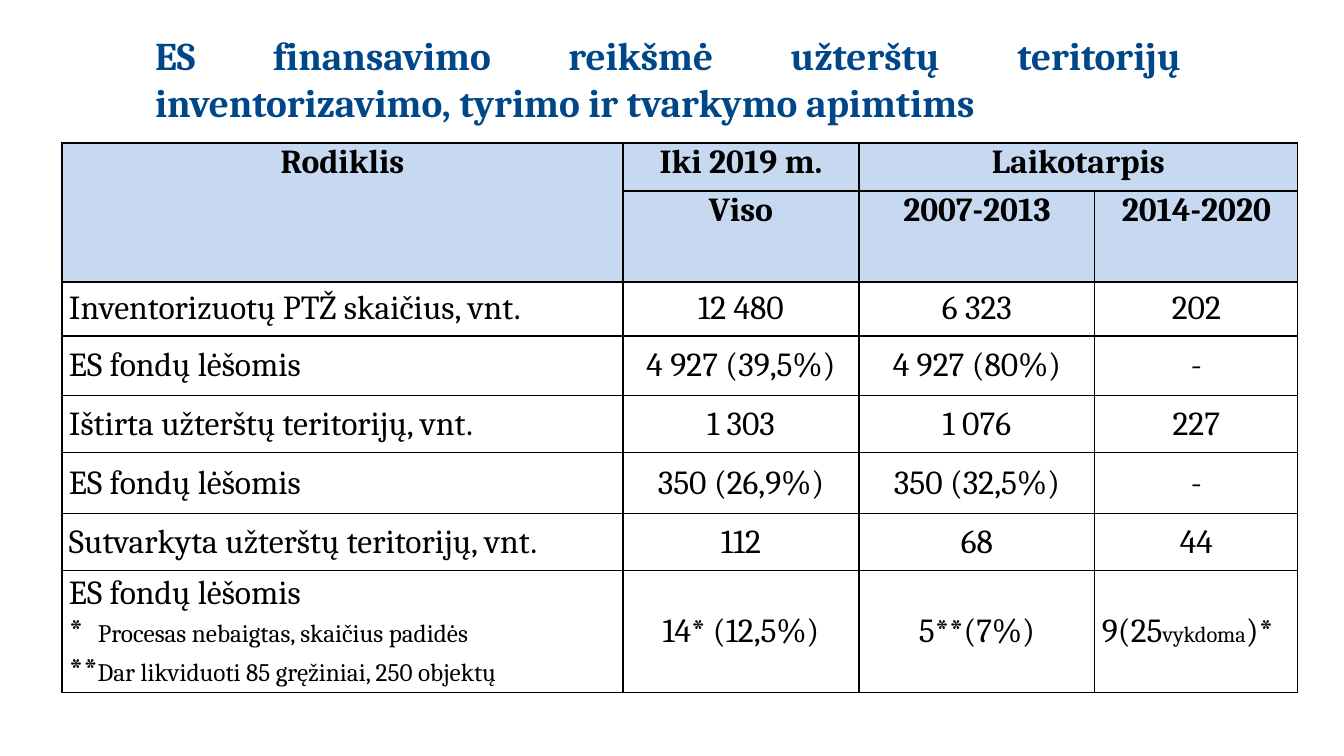
from lxml.etree import SubElement
from pptx import Presentation
from pptx.dml.color import RGBColor
from pptx.enum.text import MSO_ANCHOR as Anchor, MSO_AUTO_SIZE as Auto, PP_ALIGN as Align
from pptx.oxml import parse_xml
from pptx.oxml.ns import nsdecls, qn
from pptx.util import Pt

TITLE = "ES finansavimo reikšmė užterštų teritorijų inventorizavimo, tyrimo ir tvarkymo apimtims"
HEAD = [
    ["Rodiklis", "Iki 2019 m.", "Laikotarpis", ""],
    ["", "Viso", "2007-2013", "2014-2020"],
]
# A cell is a string or a list of lines; a line is a list of (text, size).
NOTES = [
    [("ES fondų lėšomis", 24)],
    [("*\t", 24), ("Procesas nebaigtas, skaičius padidės", 18)],
    [("**", 24), ("Dar likviduoti 85 gręžiniai, 250 objektų", 18)],
]
ACTIVE = [[("9(25", 24), ("vykdoma", 16), (")*", 24)]]
BODY = [
    ["Inventorizuotų PTŽ skaičius, vnt.", "12 480", "6 323", "202"],
    ["ES fondų lėšomis", "4 927 (39,5%)", "4 927 (80%)", "-"],
    ["Ištirta užterštų teritorijų, vnt.", "1 303", "1 076", "227"],
    ["ES fondų lėšomis", "350 (26,9%)", "350 (32,5%)", "-"],
    ["Sutvarkyta užterštų teritorijų, vnt.", "112", "68", "44"],
    [NOTES, "14* (12,5%)", "5**(7%)", ACTIVE],
]
MERGES = [((0, 0), (1, 0)), ((0, 2), (0, 3))]
COLS = [561, 236, 236, 203]
ROWS = [48, 91, 54, 60, 57, 61, 57, 122]
LEFT, TOP, INSET, TAB = 62, 143, 7, 29

FONT = "Cambria"
BLACK = RGBColor(0x00, 0x00, 0x00)
NAVY = RGBColor(0x00, 0x47, 0x8A)
PALE = RGBColor(0xC6, 0xD9, 0xF1)


def px(n):
    return round(n * 914400 / 100.8)


def write(frame, text, size=24, color=BLACK, bold=False, align=Align.LEFT):
    lines = [[(text, size)]] if isinstance(text, str) else text
    for i, line in enumerate(lines):
        para = frame.add_paragraph() if i else frame.paragraphs[0]
        para.alignment = align
        if any("\t" in part for part, _ in line):
            tabs = SubElement(para._p.get_or_add_pPr(), qn("a:tabLst"))
            SubElement(tabs, qn("a:tab"), pos=str(px(TAB)), algn="l")
        for part, pts in line:
            run = para.add_run()
            run.text = part
            font = run.font
            font.name, font.size, font.bold = FONT, Pt(pts), bold
            font.color.rgb = color


def frame_cell(cell):
    """Draw a thin line on all four sides of a cell."""
    props = cell._tc.get_or_add_tcPr()
    for i, side in enumerate("LRTB"):
        props.insert(i, parse_xml(
            f'<a:ln{side} {nsdecls("a")} w="{Pt(1)}"><a:solidFill>'
            f'<a:srgbClr val="{BLACK}"/></a:solidFill></a:ln{side}>'))


def add_title(slide):
    title = slide.shapes.title
    title.left, title.top, title.width, title.height = map(px, (145, 26, 1046, 105))
    frame = title.text_frame
    frame.word_wrap, frame.auto_size = True, Auto.NONE
    frame.vertical_anchor = Anchor.MIDDLE
    write(frame, TITLE, size=28, color=NAVY, bold=True, align=Align.JUSTIFY)


def add_grid(slide):
    grid = slide.shapes.add_table(
        len(ROWS), len(COLS), px(LEFT), px(TOP), px(sum(COLS)), px(sum(ROWS))).table
    grid.first_row = grid.horz_banding = False
    for col, width in zip(grid.columns, COLS):
        col.width = px(width)
    for row, height in zip(grid.rows, ROWS):
        row.height = px(height)
    for r, texts in enumerate(HEAD + BODY):
        head = r < len(HEAD)
        for c, text in enumerate(texts):
            cell = grid.cell(r, c)
            cell.margin_left = cell.margin_right = px(INSET)
            cell.margin_top = cell.margin_bottom = 0
            cell.vertical_anchor = Anchor.TOP if head else Anchor.MIDDLE
            if head:
                cell.fill.solid()
                cell.fill.fore_color.rgb = PALE
            else:
                cell.fill.background()
            frame_cell(cell)
            mid = head or (c > 0 and text is not ACTIVE)
            if text:
                write(cell.text_frame, text, bold=head,
                      align=Align.CENTER if mid else Align.LEFT)
    for first, last in MERGES:
        grid.cell(*first).merge(grid.cell(*last))


def main():
    deck = Presentation()
    deck.slide_width, deck.slide_height = px(1344), px(756)
    slide = deck.slides.add_slide(deck.slide_layouts[5])
    add_grid(slide)
    add_title(slide)
    deck.save("out.pptx")


if __name__ == "__main__":
    main()
